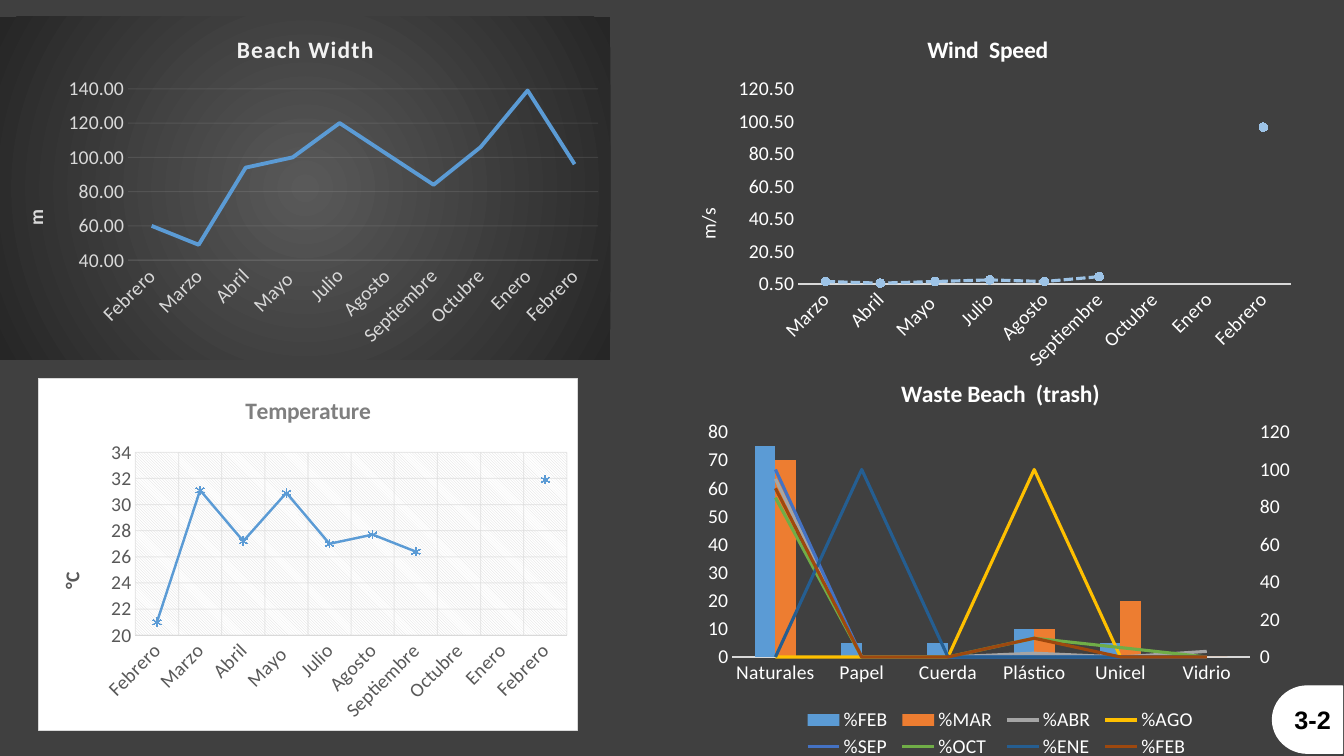
from lxml.etree import SubElement
from pptx import Presentation
from pptx.chart.axis import ValueAxis
from pptx.chart.data import CategoryChartData
from pptx.dml.color import RGBColor
from pptx.enum.chart import XL_CHART_TYPE as ChartType, XL_LEGEND_POSITION as LegendPosition
from pptx.enum.chart import XL_MARKER_STYLE as MarkerStyle, XL_TICK_MARK as TickMark
from pptx.enum.dml import MSO_LINE as Dash
from pptx.enum.shapes import MSO_SHAPE as Preset
from pptx.enum.text import MSO_ANCHOR as Anchor, PP_ALIGN as Align
from pptx.oxml import parse_xml
from pptx.oxml.ns import nsdecls, qn
from pptx.util import Pt

MONTHS = ["Febrero", "Marzo", "Abril", "Mayo ", "Julio", "Agosto",
          "Septiembre", "Octubre", "Enero", "Febrero"]
WASTE_KINDS = ["Naturales ", "Papel", "Cuerda", "Plástico", "Unicel", "Vidrio"]
WASTE = [
    ("%FEB", "5B9BD5", [75, 5, 5, 10, 5, 0]),
    ("%MAR", "ED7D31", [70, 0, 0, 10, 20, 0]),
    ("%ABR", "A5A5A5", [95, 0, 0, 2, 0, 3]),
    ("%AGO", "FFC000", [0, 0, 0, 100, 0, 0]),
    ("%SEP", "4472C4", [100, 0, 0, 0, 0, 0]),
    ("%OCT", "70AD47", [85, 0, 0, 10, 5, 0]),
    ("%ENE", "255E91", [0, 100, 0, 0, 0, 0]),
    ("%FEB", "9E480E", [90, 0, 0, 10, 0, 0]),
]
NO_FILL = "<a:noFill/>"
NO_LINE = "<a:ln><a:noFill/></a:ln>"
DARK_GLOW = (
    '<a:gradFill><a:gsLst><a:gs pos="0"><a:srgbClr val="595959"/></a:gs>'
    '<a:gs pos="100000"><a:srgbClr val="262626"/></a:gs></a:gsLst>'
    '<a:path path="circle"><a:fillToRect l="50000" t="50000" r="50000" b="50000"/></a:path>'
    '</a:gradFill>')
WHITE_FILL = '<a:solidFill><a:srgbClr val="FFFFFF"/></a:solidFill>'
GREY_BORDER = '<a:ln w="9525"><a:solidFill><a:srgbClr val="D9D9D9"/></a:solidFill></a:ln>'
HATCH = ('<a:pattFill prst="ltDnDiag"><a:fgClr><a:srgbClr val="D9D9D9"/></a:fgClr>'
         '<a:bgClr><a:srgbClr val="FFFFFF"/></a:bgClr></a:pattFill>')


def color(value):
    return RGBColor.from_string(value)


def style_font(font, size, hue, bold=False, name="Calibri"):
    font.name, font.size, font.bold = name, Pt(size), bold
    font.color.rgb = color(hue)


def style_line(line, hue, width, opacity=100):
    line.color.rgb = color(hue)
    line.width = Pt(width)
    if opacity < 100:
        hue_element = line._get_or_add_ln().find(".//" + qn("a:srgbClr"))
        SubElement(hue_element, qn("a:alpha")).set("val", str(opacity * 1000))


def shape_properties(content):
    return parse_xml(f'<c:spPr {nsdecls("c", "a")}>{content}</c:spPr>')


def set_layout(parent, index, x, y, w=None, h=None, inner=False):
    for old in parent.findall(qn("c:layout")):
        parent.remove(old)
    target = '<c:layoutTarget val="inner"/>' if inner else ""
    sizes = "" if w is None else f'<c:w val="{w}"/><c:h val="{h}"/>'
    parent.insert(index, parse_xml(
        f'<c:layout {nsdecls("c")}><c:manualLayout>{target}<c:xMode val="edge"/>'
        f'<c:yMode val="edge"/><c:x val="{x}"/><c:y val="{y}"/>{sizes}'
        '</c:manualLayout></c:layout>'))


def add_title_run(text_frame, text, size, hue, bold, spacing=0):
    run = text_frame.paragraphs[0].add_run()
    run.text = text
    style_font(run.font, size, hue, bold)
    if spacing:
        run.font._element.set("spc", str(spacing))


def add_chart(slide, kind, box, plot_box, categories, series, title, title_hue,
              text_hue, label_turn, fill=NO_FILL, border=NO_LINE, spacing=0):
    data = CategoryChartData()
    data.categories = categories
    for name, values in series:
        data.add_series(name, values)
    chart = slide.shapes.add_chart(kind, *map(Pt, box), data).chart
    style_font(chart.font, 14, text_hue)
    chart.has_legend = False
    chart.has_title = True
    add_title_run(chart.chart_title.text_frame, title, 16.8, title_hue, True, spacing)
    chart.element.find(qn("c:chart")).addnext(shape_properties(fill + border))
    set_layout(chart.element.find(".//" + qn("c:plotArea")), 0, *plot_box, inner=True)
    chart.plots[0].vary_by_categories = False
    for axis in (chart.category_axis, chart.value_axis):
        axis.major_tick_mark = axis.minor_tick_mark = TickMark.NONE
        axis.has_major_gridlines = False
        style_font(axis.tick_labels.font, 14, text_hue)
    style_line(chart.category_axis.format.line, "D9D9D9", 0.75)
    chart.value_axis.format.line.fill.background()
    labels = chart.element.find(".//" + qn("c:catAx")).find(qn("c:txPr"))
    labels.find(qn("a:bodyPr")).set("rot", str(label_turn * 60000))
    return chart


def set_value_axis(chart, low, high, step, number_format="General"):
    axis = chart.value_axis
    axis.minimum_scale, axis.maximum_scale, axis.major_unit = low, high, step
    axis.tick_labels.number_format = number_format
    axis.tick_labels.number_format_is_linked = False


def add_unit(chart, unit, hue, bold, x, y):
    add_title_run(chart.value_axis.axis_title.text_frame, unit, 14, hue, bold)
    title = chart.element.find(".//" + qn("c:valAx")).find(qn("c:title"))
    title.find(".//" + qn("a:bodyPr")).set("rot", "-5400000")
    set_layout(title, 1, x, y)


def show_gridlines(axis, hue, opacity):
    axis.has_major_gridlines = True
    style_line(axis.major_gridlines.format.line, hue, 0.75, opacity)


def style_series(series, hue, width, marker=MarkerStyle.NONE):
    series.smooth = False
    style_line(series.format.line, hue, width)
    series.marker.style = marker
    if marker != MarkerStyle.NONE:
        series.marker.size = 6
        style_line(series.marker.format.line, hue, 0.75)
        if marker == MarkerStyle.CIRCLE:
            series.marker.format.fill.solid()
            series.marker.format.fill.fore_color.rgb = color(hue)
        else:
            series.marker.format.fill.background()


def move_to_right_axis(chart, first):
    plot_area = chart.element.find(".//" + qn("c:plotArea"))
    bars = plot_area.find(qn("c:barChart"))
    lines = parse_xml(
        f'<c:lineChart {nsdecls("c")}><c:grouping val="standard"/><c:varyColors val="0"/>'
        '<c:marker val="1"/><c:axId val="5001"/><c:axId val="5002"/></c:lineChart>')
    for series in bars.findall(qn("c:ser"))[first:]:
        for flag in series.findall(qn("c:invertIfNegative")):
            series.remove(flag)
        lines.find(qn("c:marker")).addprevious(series)
    bars.addnext(lines)
    previous = plot_area.find(qn("c:valAx"))
    for tag, number, partner, hidden, side, crosses in (
            ("valAx", 5002, 5001, 0, "r", "max"), ("catAx", 5001, 5002, 1, "b", "autoZero")):
        axis = parse_xml(
            f'<c:{tag} {nsdecls("c")}><c:axId val="{number}"/>'
            '<c:scaling><c:orientation val="minMax"/></c:scaling>'
            f'<c:delete val="{hidden}"/><c:axPos val="{side}"/>'
            '<c:numFmt formatCode="General" sourceLinked="0"/>'
            '<c:majorTickMark val="out"/><c:minorTickMark val="none"/>'
            f'<c:tickLblPos val="nextTo"/><c:crossAx val="{partner}"/>'
            f'<c:crosses val="{crosses}"/></c:{tag}>')
        previous.addnext(axis)
        previous = axis
    right_axis = ValueAxis(plot_area.findall(qn("c:valAx"))[1])
    right_axis.minimum_scale, right_axis.maximum_scale, right_axis.major_unit = 0, 120, 20
    right_axis.format.line.fill.background()
    style_font(right_axis.tick_labels.font, 14, "FFFFFF")


def add_waste_chart(slide):
    chart = add_chart(slide, ChartType.COLUMN_CLUSTERED, (497, 257, 435, 287),
                      (0.06, 0.18, 0.85, 0.56), WASTE_KINDS,
                      [(name, values) for name, _, values in WASTE],
                      "Waste Beach  (trash)", "FFFFFF", "FFFFFF", 0)
    set_value_axis(chart, 0, 80, 10)
    chart.plots[0].gap_width = 219
    chart.plots[0].overlap = 0
    move_to_right_axis(chart, 2)
    bars, lines = chart.plots
    for series, (_, hue, _) in zip(bars.series, WASTE):
        series.format.fill.solid()
        series.format.fill.fore_color.rgb = color(hue)
    for series, (_, hue, _) in zip(lines.series, WASTE[2:]):
        style_series(series, hue, 2.25)
    chart.has_legend = True
    chart.legend.position = LegendPosition.BOTTOM
    chart.legend.include_in_layout = False
    style_font(chart.legend.font, 14, "FFFFFF")
    set_layout(chart.element.find(".//" + qn("c:legend")), 1, 0.17, 0.86, 0.66, 0.14)


def add_page_tab(slide, text):
    shape = slide.shapes.add_shape(Preset.FLOWCHART_DELAY, Pt(909), Pt(490), Pt(50), Pt(48))
    shape.shadow.inherit = False
    shape.element.find(".//" + qn("a:xfrm")).set("flipH", "1")
    shape.fill.solid()
    shape.fill.fore_color.rgb = color("FFFFFF")
    style_line(shape.line, "FFFFFF", 1)
    frame = shape.text_frame
    frame.margin_left = frame.margin_right = frame.margin_top = frame.margin_bottom = 0
    frame.word_wrap = False
    frame.vertical_anchor = Anchor.MIDDLE
    paragraph = frame.paragraphs[0]
    paragraph.alignment = Align.CENTER
    run = paragraph.add_run()
    run.text = text
    style_font(run.font, 18, "000000", True, "Arial")


def main():
    presentation = Presentation()
    presentation.slide_width, presentation.slide_height = Pt(960), Pt(540)
    slide = presentation.slides.add_slide(presentation.slide_layouts[6])
    slide.background.fill.solid()
    slide.background.fill.fore_color.rgb = color("404040")
    add_page_tab(slide, "3-2")

    width = add_chart(slide, ChartType.LINE, (0, 12, 436, 245), (0.21, 0.16, 0.77, 0.55), MONTHS,
                      [("Series 1", [60, 49, 94, 100, 120, 102, 84, 106, 139, 96])],
                      "Beach Width", "F2F2F2", "D9D9D9", -45, DARK_GLOW, spacing=100)
    set_value_axis(width, 40, 150, 20, "0.00")
    add_unit(width, "m", "D9D9D9", True, 0.03, 0.55)
    show_gridlines(width.value_axis, "F2F2F2", 10)
    style_line(width.category_axis.format.line, "F2F2F2", 0.75, 10)
    style_series(width.series[0], "5B9BD5", 2.75)

    heat = add_chart(slide, ChartType.LINE_MARKERS, (27, 270, 386, 252), (0.18, 0.21, 0.8, 0.52),
                     MONTHS, [("Series 1", [21, 31.1, 27.2, 30.9, 27, 27.7, 26.4, None, None, 31.9])],
                     "Temperature", "7F7F7F", "595959", -45, WHITE_FILL, GREY_BORDER)
    set_value_axis(heat, 20, 34, 2)
    add_unit(heat, "°C", "595959", True, 0.03, 0.54)
    for axis in (heat.category_axis, heat.value_axis):
        show_gridlines(axis, "D9D9D9", 54)
    heat.element.find(".//" + qn("c:plotArea")).append(shape_properties(HATCH + NO_LINE))
    style_series(heat.series[0], "5B9BD5", 1.75, MarkerStyle.STAR)

    wind = add_chart(slide, ChartType.LINE_MARKERS, (480, 12, 451, 258), (0.2, 0.2, 0.78, 0.54),
                     MONTHS[1:], [("Series 1", [2, 1, 2, 3, 2, 5, None, None, 97])],
                     "Wind  Speed", "FFFFFF", "FFFFFF", -45)
    set_value_axis(wind, 0.5, 120.5, 20, "0.00")
    add_unit(wind, "m/s", "FFFFFF", False, 0.03, 0.52)
    style_series(wind.series[0], "9DC3E6", 2.25, MarkerStyle.CIRCLE)
    wind.series[0].format.line.dash_style = Dash.SQUARE_DOT

    add_waste_chart(slide)
    presentation.save("out.pptx")


if __name__ == "__main__":
    main()
